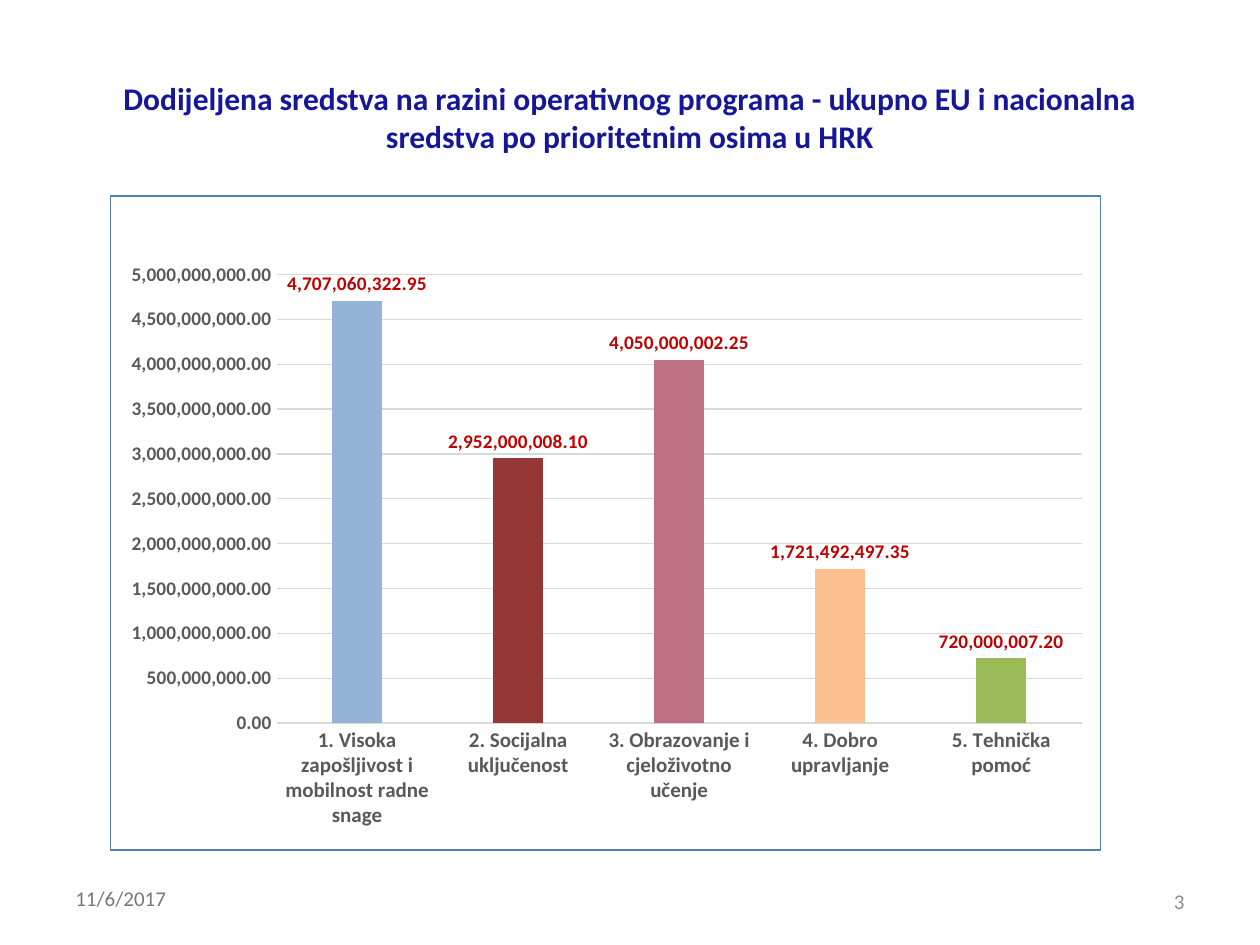
"""Build the slide with allocated funds by priority axis as a column chart."""
from lxml import etree
from pptx import Presentation
from pptx.chart.data import CategoryChartData
from pptx.dml.color import RGBColor
from pptx.enum.chart import XL_CHART_TYPE, XL_LABEL_POSITION, XL_TICK_MARK
from pptx.enum.text import MSO_ANCHOR, PP_ALIGN
from pptx.util import Cm, Pt

COLUMN = XL_CHART_TYPE.COLUMN_CLUSTERED
OUTSIDE_END = XL_LABEL_POSITION.OUTSIDE_END
NO_TICK = XL_TICK_MARK.NONE
TOP, MIDDLE = MSO_ANCHOR.TOP, MSO_ANCHOR.MIDDLE
LEFT, CENTER, RIGHT = PP_ALIGN.LEFT, PP_ALIGN.CENTER, PP_ALIGN.RIGHT

FONT = "Calibri"
NUMBER_FORMAT = "#,##0.00"
COLORS = {
    "title": "161796", "date": "777877", "number": "8C8C8C",
    "chart": "000000", "axis": "595959", "grid": "D9D9D9",
    "label": "C00000", "border": "4F81BD",
}
AXES = [
    ("1. Visoka zapošljivost i mobilnost radne snage", 4707060322.95, "95B3D7"),
    ("2. Socijalna uključenost", 2952000008.10, "953735"),
    ("3. Obrazovanje i cjeloživotno učenje", 4050000002.25, "BF7184"),
    ("4. Dobro upravljanje", 1721492497.35, "FAC090"),
    ("5. Tehnička pomoć", 720000007.20, "9BBB59"),
]
NAMESPACES = (
    'xmlns:c="http://schemas.openxmlformats.org/drawingml/2006/chart" '
    'xmlns:a="http://schemas.openxmlformats.org/drawingml/2006/main"'
)
PLOT_LAYOUT = {"x": 0.168, "y": 0.12, "w": 0.813, "h": 0.686}


def style_font(font, size, color, bold=False):
    font.name = FONT
    font.size = Pt(size)
    font.bold = bold
    font.color.rgb = RGBColor.from_string(COLORS[color])


def fill_text(box, text, size, color, anchor, align, bold=False):
    frame = box.text_frame
    frame.text = text
    frame.word_wrap = True
    frame.vertical_anchor = anchor
    para = frame.paragraphs[0]
    para.alignment = align
    style_font(para.runs[0].font, size, color, bold)


deck = Presentation()
deck.slide_width, deck.slide_height = Cm(25.4), Cm(19.05)
page = deck.slides.add_slide(deck.slide_layouts[5])

title = page.shapes.title
title.left, title.top, title.width, title.height = Cm(1.27), Cm(0.76), Cm(22.86), Cm(3.18)
fill_text(title, "Dodijeljena sredstva na razini operativnog programa - ukupno EU "
          "i nacionalna sredstva po prioritetnim osima u HRK",
          18, "title", MIDDLE, CENTER, True)

data = CategoryChartData(number_format=NUMBER_FORMAT)
data.categories = [name for name, amount, color in AXES]
data.add_series("Series 1", [amount for name, amount, color in AXES])
chart = page.shapes.add_chart(COLUMN, Cm(2.21), Cm(3.94), Cm(19.99), Cm(13.21), data).chart
chart.has_title = False
chart.has_legend = False
style_font(chart.font, 10, "chart")

for axis, size in ((chart.category_axis, 12), (chart.value_axis, 11)):
    axis.major_tick_mark = axis.minor_tick_mark = NO_TICK
    style_font(axis.tick_labels.font, size, "axis", True)

value_axis = chart.value_axis
value_axis.minimum_scale, value_axis.maximum_scale = 0, 5_000_000_000
value_axis.major_unit = 500_000_000
value_axis.format.line.fill.background()
value_axis.has_major_gridlines = True
value_axis.tick_labels.number_format = NUMBER_FORMAT
value_axis.tick_labels.number_format_is_linked = False
for line in (chart.category_axis.format.line, value_axis.major_gridlines.format.line):
    line.width = Pt(0.75)
    line.color.rgb = RGBColor.from_string(COLORS["grid"])

plot = chart.plots[0]
plot.gap_width, plot.overlap = 219, -27
plot.vary_by_categories = False
series = plot.series[0]
series.format.fill.solid()
series.format.fill.fore_color.rgb = RGBColor.from_string(COLORS["border"])
for index, (name, amount, color) in enumerate(AXES):
    fill = series.points[index].format.fill
    fill.solid()
    fill.fore_color.rgb = RGBColor.from_string(color)

labels = series.data_labels
labels.show_value = True
labels.position = OUTSIDE_END
labels.number_format = NUMBER_FORMAT
labels.number_format_is_linked = False
style_font(labels.font, 11, "label", True)

chart_space = chart.element
plot_area = chart_space.find(".//{*}plotArea")
for layout in plot_area.findall("{*}layout"):
    plot_area.remove(layout)
modes = "".join(f'<c:{side}Mode val="edge"/>' for side in "xy")
sizes = "".join(f'<c:{side} val="{share}"/>' for side, share in PLOT_LAYOUT.items())
plot_area.insert(0, etree.fromstring(
    f'<c:layout {NAMESPACES}><c:manualLayout><c:layoutTarget val="inner"/>'
    f"{modes}{sizes}</c:manualLayout></c:layout>"))
chart_space.find("{*}chart").addnext(etree.fromstring(
    f'<c:spPr {NAMESPACES}><a:noFill/><a:ln w="{Pt(0.75)}"><a:solidFill>'
    f'<a:srgbClr val="{COLORS["border"]}"/></a:solidFill></a:ln></c:spPr>'))

FOOTERS = [
    ("11/6/2017", 1.27, 17.73, "date", TOP, LEFT),
    ("3", 18.21, 17.65, "number", MIDDLE, RIGHT),
]
for text, left, top, color, anchor, align in FOOTERS:
    box = page.shapes.add_textbox(Cm(left), Cm(top), Cm(5.92), Cm(1.02))
    fill_text(box, text, 12, color, anchor, align)

deck.save("out.pptx")
